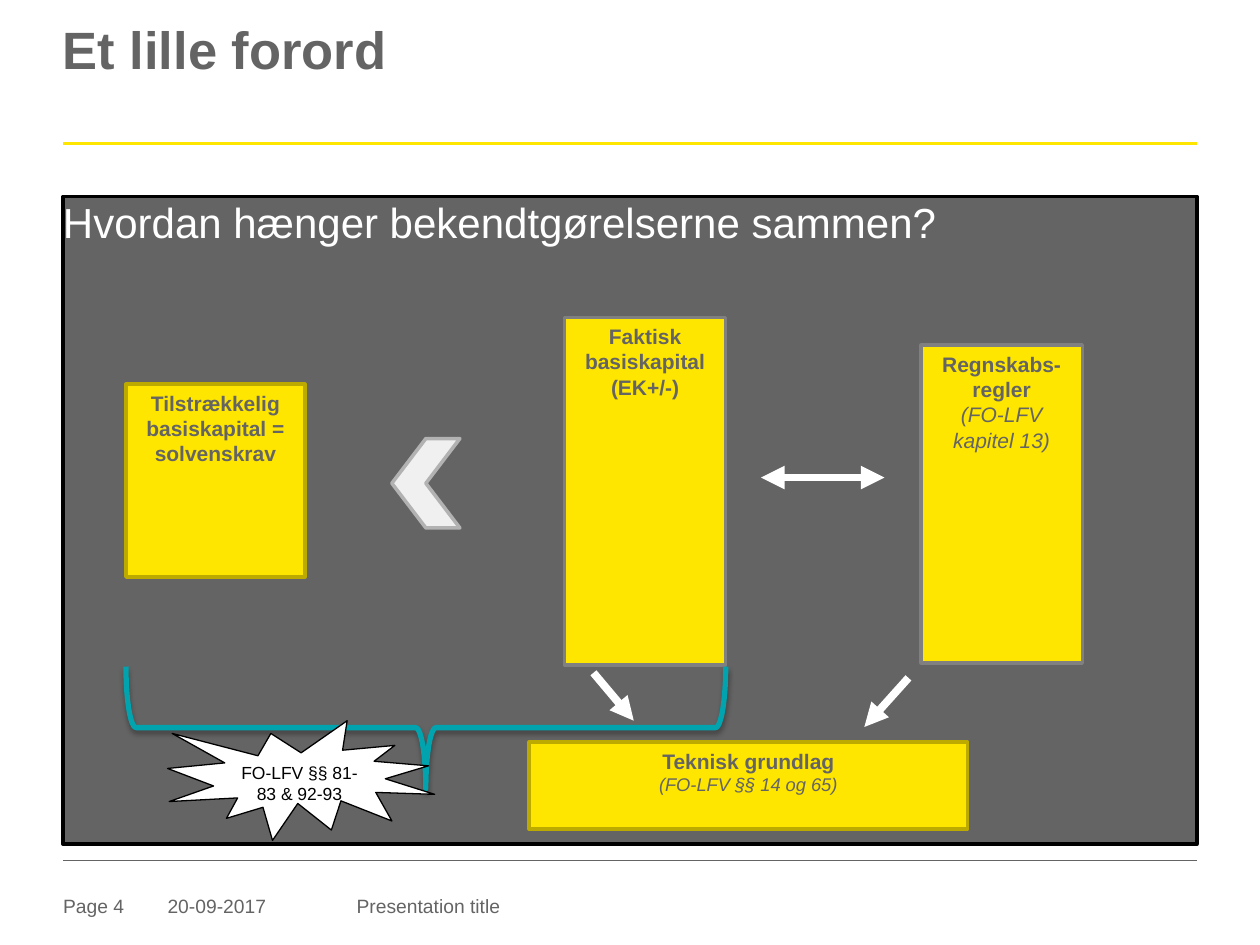
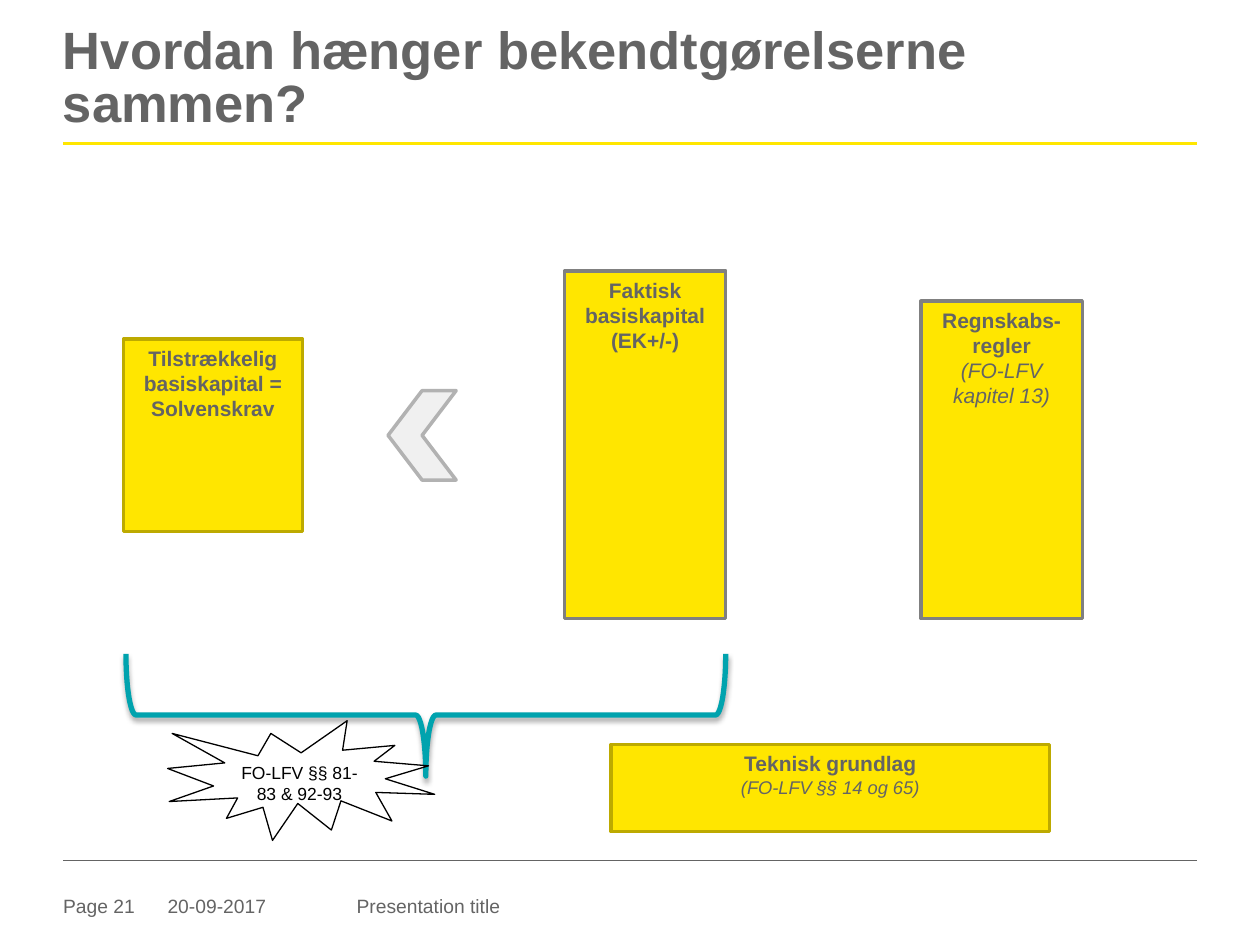
from lxml.etree import SubElement as Sub
from pptx import Presentation
from pptx.dml.color import RGBColor
from pptx.enum.shapes import MSO_CONNECTOR, MSO_SHAPE as Kind
from pptx.enum.text import MSO_ANCHOR, PP_ALIGN as Align
from pptx.oxml.ns import qn
from pptx.util import Inches, Pt

GREY = RGBColor(0x64, 0x64, 0x64)
YELLOW = RGBColor(0xFF, 0xE6, 0x00)
OCHRE = RGBColor(0xBD, 0xAA, 0x00)
STEEL = RGBColor(0x80, 0x80, 0x80)
PALE = RGBColor(0xF0, 0xF0, 0xF0)
SILVER = RGBColor(0xB2, 0xB2, 0xB2)
TEAL = RGBColor(0x00, 0xA3, 0xAE)
WHITE = RGBColor(0xFF, 0xFF, 0xFF)
BLACK = RGBColor(0x00, 0x00, 0x00)
FONT = "Arial"
LEFT, WIDTH = 0.5, 9
BODY = (LEFT, 1.56, WIDTH, 5.14)


def style(para, size, color, bold=False, italic=False):
    """Set the look of every run in a paragraph."""
    for run in para.runs:
        font = run.font
        font.name, font.size, font.color.rgb = FONT, Pt(size), color
        font.bold, font.italic = bold, italic


def strip(frame):
    """Remove the insets of a text frame."""
    frame.margin_left = frame.margin_right = 0
    frame.margin_top = frame.margin_bottom = 0


def label(slide, box, text, size, bold=False, wrap=True):
    """Add a plain grey text box and return its paragraph."""
    frame = slide.shapes.add_textbox(*map(Inches, box)).text_frame
    strip(frame)
    frame.word_wrap = wrap
    frame.text = text
    para = frame.paragraphs[0]
    style(para, size, GREY, bold)
    return para


def line(slide, start, end, color, width, ends=()):
    """Draw a straight line with arrowheads at the named ends."""
    link = slide.shapes.add_connector(
        MSO_CONNECTOR.STRAIGHT, *map(Inches, start + end))
    link.line.color.rgb, link.line.width = color, Pt(width)
    for end in ends:
        Sub(link.line._get_or_add_ln(), qn("a:" + end), type="triangle")
    Sub(link._element.spPr, qn("a:effectLst"))


def shape(slide, kind, box, fill, edge, width=2, turn=0):
    """Add a preset shape without shadow."""
    item = slide.shapes.add_shape(kind, *map(Inches, box))
    item.shadow.inherit = False
    item.rotation = turn
    if fill is None:
        item.fill.background()
    else:
        item.fill.solid()
        item.fill.fore_color.rgb = fill
    item.line.color.rgb, item.line.width = edge, Pt(width)
    item.text_frame.vertical_anchor = MSO_ANCHOR.TOP
    return item


def card(slide, box, edge, head, note=None, size=12):
    """Add a yellow box with a bold heading and an italic note."""
    frame = shape(slide, Kind.RECTANGLE, box, YELLOW, edge).text_frame
    frame.word_wrap = True
    frame.text = head
    style(frame.paragraphs[0], 12, GREY, bold=True)
    if note:
        para = frame.add_paragraph()
        para.text = note
        style(para, size, GREY, italic=True)
    for para in frame.paragraphs:
        para.alignment = Align.CENTER


def brace(slide, x, y, width, height):
    """Add a brace that opens upwards and fills the given box."""
    side = (x + (width - height) / 2, y + (height - width) / 2, height, width)
    item = shape(slide, Kind.LEFT_BRACE, side, None, TEAL, 3, 270)
    glow = Sub(item._element.spPr.find(qn("a:effectLst")), qn("a:outerShdw"),
               blurRad=str(Pt(3.1)), dist=str(Pt(1.8)), dir="5400000",
               rotWithShape="0")
    tint = Sub(glow, qn("a:srgbClr"), val="000000")
    Sub(tint, qn("a:alpha"), val="35000")


def burst(slide, box):
    """Add the star with the reference to the rules."""
    frame = shape(slide, Kind.EXPLOSION1, box, WHITE, BLACK, 0.75).text_frame
    frame.word_wrap = True
    frame.text = "FO-LFV §§ 81-83 & 92-93"
    para = frame.paragraphs[0]
    para.alignment = Align.CENTER
    style(para, 10, BLACK)


def panel(slide, box, text):
    """Add the dark panel with its heading."""
    frame = shape(slide, Kind.RECTANGLE, box, GREY, BLACK).text_frame
    strip(frame)
    frame.word_wrap = True
    frame.text = text
    para = frame.paragraphs[0]
    para.alignment = Align.LEFT
    style(para, 24, WHITE)


def arrows(slide, box):
    """Draw the white arrows between the boxes."""
    x, y = box[:2]
    for start, end, ends in (
            ((4.21, 3.78), (4.53, 4.16), ["tailEnd"]),
            ((6.71, 3.82), (6.36, 4.21), ["tailEnd"]),
            ((5.54, 2.23), (6.52, 2.23), ["headEnd", "tailEnd"])):
        line(slide, (x + start[0], y + start[1]), (x + end[0], y + end[1]),
             WHITE, 4.5, ends)


def model(slide, box, spots, need):
    """Place the capital boxes, chevron, brace and star in a box."""
    def put(name, width, height):
        dx, dy = spots[name]
        return box[0] + dx, box[1] + dy, width, height

    card(slide, put("fact", 1.28, 2.76), STEEL, "Faktisk basiskapital (EK+/-)")
    card(slide, put("rules", 1.28, 2.52), STEEL, "Regnskabs-regler",
         "(FO-LFV kapitel 13)")
    card(slide, put("base", 3.48, 0.69), OCHRE, "Teknisk grundlag",
         "(FO-LFV §§ 14 og 65)", 10.5)
    card(slide, put("need", 1.42, 1.53), OCHRE, need)
    brace(slide, *put("brace", 4.76, 0.97))
    burst(slide, put("burst", 2.12, 0.95))
    shape(slide, Kind.CHEVRON, put("sign", 0.54, 0.71), PALE, SILVER, turn=180)


def frame(deck, title, page):
    """Add a slide with title, rules and footer."""
    slide = deck.slides.add_slide(deck.slide_layouts[6])
    for y, color, width in ((1.14, YELLOW, 1.5), (6.83, GREY, 0.25)):
        line(slide, (LEFT, y), (LEFT + WIDTH, y), color, width)
    head = label(slide, (LEFT, 0.21, WIDTH, 0.94), title, 30, bold=True)
    head.line_spacing = 0.85
    for x, width, text, wrap in ((LEFT, 0.79, f"Page {page}", True),
                                 (1.33, 1.3, "20-09-2017", False),
                                 (2.83, 3.76, "Presentation title", True)):
        label(slide, (x, 7.1, width, 0.22), text, 11, wrap=wrap)
    return slide


def main():
    """Build both slides and save them."""
    deck = Presentation()
    deck.slide_width, deck.slide_height = Inches(10), Inches(7.5)
    ask = "Hvordan hænger bekendtgørelserne sammen?"

    first = frame(deck, "Et lille forord", 4)
    panel(first, BODY, ask)
    arrows(first, BODY)
    model(first, BODY, {
        "fact": (3.98, 0.96), "rules": (6.81, 1.18), "base": (3.7, 4.33),
        "need": (0.5, 1.49), "brace": (0.5, 3.73), "burst": (0.83, 4.16),
        "sign": (2.61, 1.92)}, "Tilstrækkelig basiskapital = solvenskrav")

    last = frame(deck, ask, 21)
    model(last, BODY, {
        "fact": (3.98, 0.59), "rules": (6.81, 0.83), "base": (4.35, 4.35),
        "need": (0.48, 1.13), "brace": (0.5, 3.63), "burst": (0.83, 4.16),
        "sign": (2.58, 1.54)}, "Tilstrækkelig basiskapital = Solvenskrav")
    deck.save("out.pptx")


if __name__ == "__main__":
    main()
